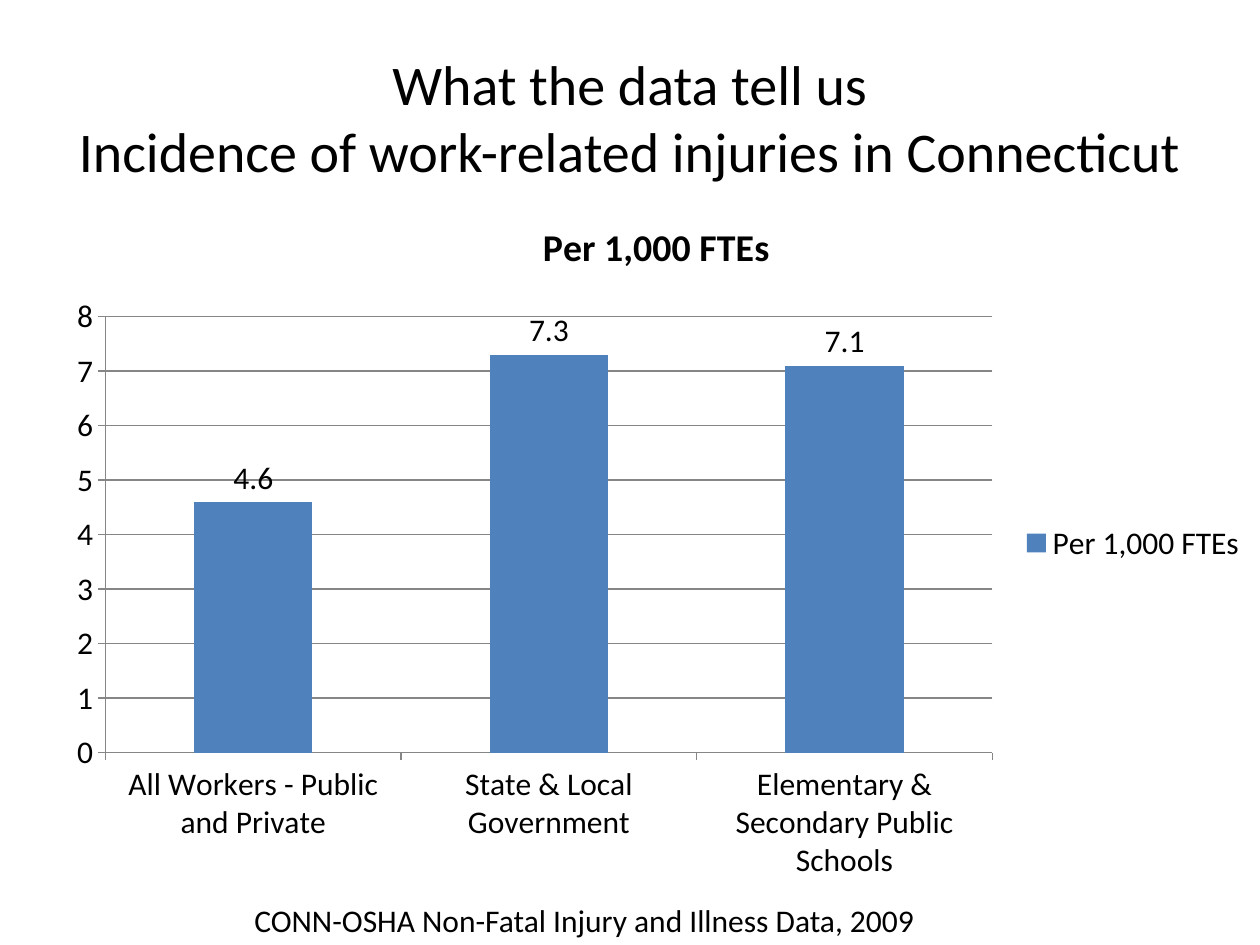
from pptx import Presentation
from pptx.chart.data import CategoryChartData
from pptx.dml.color import RGBColor
from pptx.enum.chart import XL_CHART_TYPE, XL_LABEL_POSITION, XL_LEGEND_POSITION, XL_TICK_MARK
from pptx.enum.text import MSO_ANCHOR, PP_ALIGN
from pptx.util import Inches, Pt

# Content
TITLE_LINES = ["What the data tell us", "Incidence of work-related injuries in Connecticut"]
MEASURE = "Per 1,000 FTEs"
INJURY_RATES = {
    "All Workers - Public and Private": 4.6,
    "State & Local Government": 7.3,
    "Elementary & Secondary Public Schools": 7.1,
}
DATA_SOURCE = "CONN-OSHA Non-Fatal Injury and Illness Data, 2009"

# Style
FONT, BLACK, BLUE, GREY = "Calibri", "000000", "4F81BD", "868686"


def color(hex_code):
    return RGBColor.from_string(hex_code)


def style_font(font, size, bold=False):
    font.name, font.size, font.bold = FONT, Pt(size), bold
    font.color.rgb = color(BLACK)


def write_text(frame, lines, size=18, bold=False, align=PP_ALIGN.LEFT, anchor=MSO_ANCHOR.TOP):
    frame.word_wrap = True
    frame.vertical_anchor = anchor
    paragraph = frame.paragraphs[0]
    paragraph.alignment = align
    for number, line in enumerate(lines):
        if number:
            paragraph.add_line_break()
        run = paragraph.add_run()
        run.text = line
        style_font(run.font, size, bold)


def place(left, top, width, height):
    return [Inches(length) for length in (left, top, width, height)]


deck = Presentation()
deck.slide_width, deck.slide_height = Inches(10), Inches(7.5)
slide = deck.slides.add_slide(deck.slide_layouts[5])

# Title
title = slide.shapes.title
title.left, title.top, title.width, title.height = place(0.5, 0.3, 9, 1.25)
write_text(title.text_frame, TITLE_LINES, size=32, align=PP_ALIGN.CENTER, anchor=MSO_ANCHOR.MIDDLE)

# Injury rate chart
rates = CategoryChartData(number_format="General")
rates.categories = list(INJURY_RATES)
rates.add_series(MEASURE, list(INJURY_RATES.values()))
chart = slide.shapes.add_chart(
    XL_CHART_TYPE.COLUMN_CLUSTERED, *place(0.42, 1.53, 9.58, 5.56), rates).chart
style_font(chart.font, 18)
chart.has_title = True
write_text(chart.chart_title.text_frame, [MEASURE], size=21.6, bold=True, align=PP_ALIGN.CENTER)
chart.chart_title.include_in_layout = False
chart.has_legend = True
chart.legend.position = XL_LEGEND_POSITION.RIGHT
chart.legend.include_in_layout = False

# Columns and value labels
plot = chart.plots[0]
plot.gap_width = 150
plot.vary_by_categories = False
columns = plot.series[0]
columns.format.fill.solid()
columns.format.fill.fore_color.rgb = color(BLUE)
labels = columns.data_labels
labels.show_value = True
labels.position = XL_LABEL_POSITION.OUTSIDE_END
style_font(labels.font, 18)

# Axes and gridlines
chart.value_axis.has_major_gridlines = True
for axis in (chart.category_axis, chart.value_axis):
    axis.major_tick_mark = XL_TICK_MARK.OUTSIDE
    axis.minor_tick_mark = XL_TICK_MARK.NONE
for ruled in (chart.category_axis, chart.value_axis, chart.value_axis.major_gridlines):
    ruled.format.line.color.rgb = color(GREY)
    ruled.format.line.width = Pt(0.75)

# Data source
source_box = slide.shapes.add_textbox(*place(1.92, 7.1, 6.75, 0.4))
write_text(source_box.text_frame, [DATA_SOURCE])

deck.save("out.pptx")
